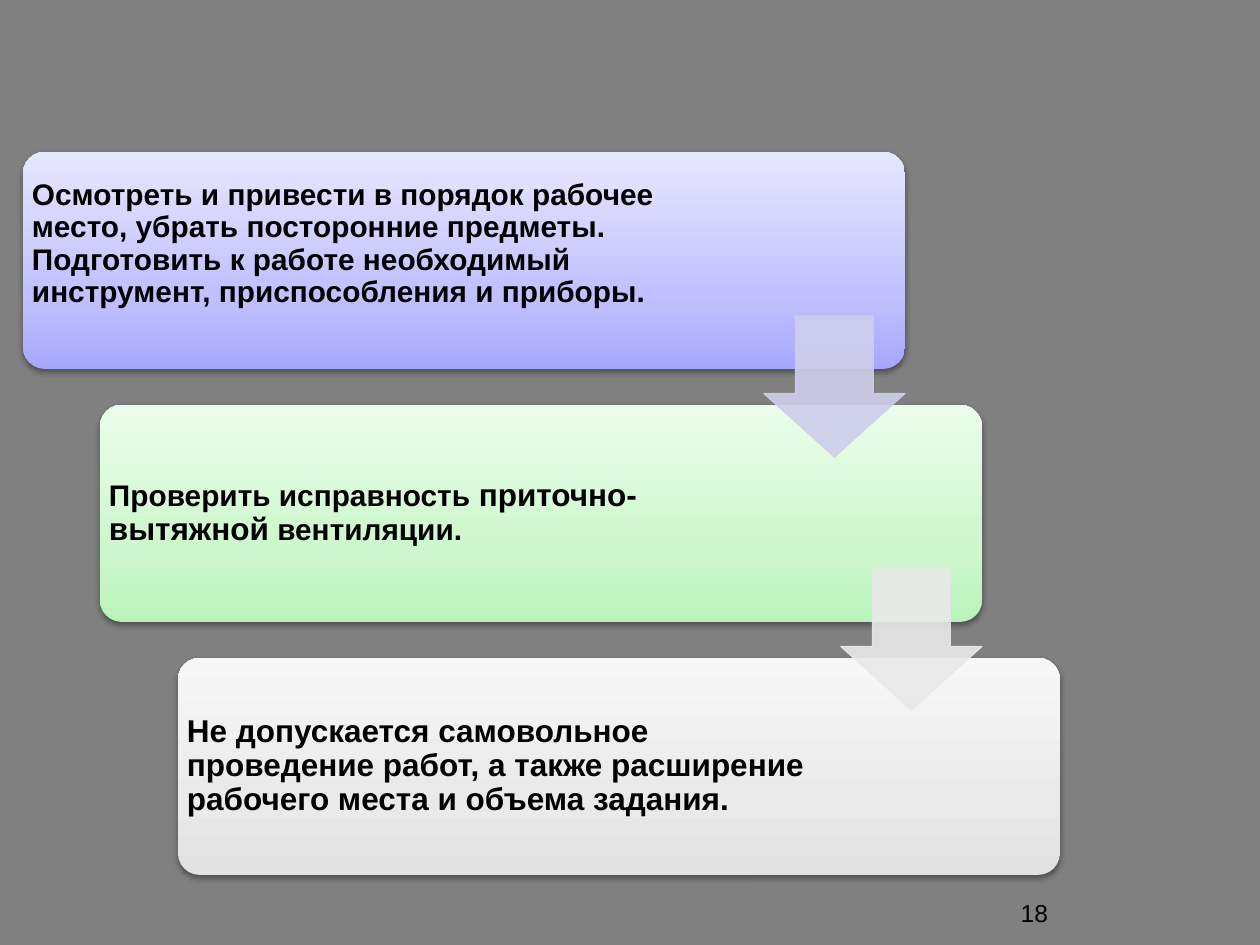
from copy import deepcopy
from dataclasses import dataclass

from pptx import Presentation
from pptx.dml.color import RGBColor
from pptx.enum.shapes import MSO_SHAPE
from pptx.enum.text import MSO_ANCHOR, PP_ALIGN
from pptx.oxml import parse_xml
from pptx.oxml.ns import nsdecls, qn
from pptx.util import Pt

EMU_PER_PX = 914400 / 126


@dataclass(frozen=True)
class Theme:
    font: str = "Arial"
    background: str = "808080"
    ink: str = "000000"
    small: int = 17
    large: int = 18
    number: int = 14
    cards: tuple = (
        ("A7A7FF", "C1C1FF", "E7E7FF"),
        ("BAF4BA", "CEF7CE", "EBFDEB"),
        ("E2E2E2", "EAEAEA", "F7F7F7"),
    )
    arrows: tuple = ("CECEEC", "E9E9E9")


@dataclass(frozen=True)
class Box:
    left: int
    top: int
    width: int
    height: int

    def emu(self):
        return [px(n) for n in (self.left, self.top, self.width, self.height)]


THEME = Theme()

STEPS = (
    (
        (
            ("Осмотреть и привести в порядок рабочее место, убрать посторонние предметы.", THEME.small),
            ("\n", THEME.small),
            ("Подготовить к работе необходимый инструмент, приспособления и приборы.", THEME.small),
        ),
        41,
    ),
    (
        (
            ("Проверить исправность ", THEME.small),
            ("приточно-вытяжной", THEME.large),
            (" вентиляции.", THEME.small),
        ),
        9,
    ),
    (
        (
            (
                "Не допускается самовольное проведение работ, а также расширение "
                "рабочего места и объема задания.",
                THEME.large,
            ),
        ),
        9,
    ),
)


def px(length):
    return round(length * EMU_PER_PX)


def color(value):
    return RGBColor.from_string(value)


def add_span(para, text, size, bold=False):
    if text == "\n":
        previous = para.runs[-1].font
        para.add_line_break()
        para._p[-1].append(deepcopy(para.runs[-1]._r.rPr))
        previous.size = Pt(size)
        return
    span = para.add_run()
    span.text = text
    span.font.name = THEME.font
    span.font.size = Pt(size)
    span.font.bold = bold
    span.font.color.rgb = color(THEME.ink)


def add_text_box(page, box, insets, anchor):
    frame = page.shapes.add_textbox(*box.emu()).text_frame
    frame.word_wrap = True
    frame.vertical_anchor = anchor
    frame.margin_left, frame.margin_top, frame.margin_right, frame.margin_bottom = map(px, insets)
    return frame.paragraphs[0]


def add_shadow(shape):
    shape._element.spPr.append(parse_xml(
        f'<a:effectLst {nsdecls("a")}>'
        f'<a:outerShdw blurRad="{Pt(3.1)}" dist="{Pt(1.6)}" dir="5400000" rotWithShape="0">'
        '<a:srgbClr val="000000"><a:alpha val="38000"/></a:srgbClr>'
        '</a:outerShdw></a:effectLst>'
    ))


def add_card(page, box, colors, spans, bottom_inset):
    card = page.shapes.add_shape(MSO_SHAPE.ROUNDED_RECTANGLE, *box.emu())
    card.adjustments[0] = 0.1
    card.line.fill.background()
    card.fill.gradient()
    card.fill.gradient_angle = 90
    stop_list = card._element.spPr.find(".//" + qn("a:gsLst"))
    stop_list.append(deepcopy(stop_list[-1]))
    for stop, value, position in zip(card.fill.gradient_stops, colors, (0, 0.35, 1)):
        stop.color.rgb = color(value)
        stop.position = position
    add_shadow(card)

    text_box = Box(box.left, box.top, 662, box.height)
    para = add_text_box(page, text_box, (9, 9, 9, bottom_inset), MSO_ANCHOR.MIDDLE)
    para.line_spacing = 0.9
    for text, size in spans:
        add_span(para, text, size, bold=True)


def add_arrow(page, box, value):
    arrow = page.shapes.add_shape(MSO_SHAPE.DOWN_ARROW, *box.emu())
    arrow.shadow.inherit = False
    arrow.adjustments[0] = 0.55
    arrow.adjustments[1] = 0.45
    arrow.fill.solid()
    arrow.fill.fore_color.rgb = color(value)
    arrow.line.color.rgb = color(value)
    arrow.line.width = Pt(0.75)
    for paint in arrow._element.spPr.iter(qn("a:srgbClr")):
        paint.append(parse_xml(f'<a:alpha {nsdecls("a")} val="90000"/>'))


def add_staircase(page, box):
    card_width, card_height = 882, 217
    gaps = len(STEPS) - 1
    cards = [
        Box(
            box.left + (box.width - card_width) * index // gaps,
            box.top + (box.height - card_height) * index // gaps,
            card_width,
            card_height,
        )
        for index in range(len(STEPS))
    ]
    for card, colors, (spans, bottom_inset) in zip(cards, THEME.cards, STEPS):
        add_card(page, card, colors, spans, bottom_inset)
    for card, value in zip(cards, THEME.arrows):
        add_arrow(page, Box(card.left + 741, card.top + 164, 141, 141), value)


def add_page_number(page, box, number):
    para = add_text_box(page, box, (13, 6, 13, 6), MSO_ANCHOR.TOP)
    para.alignment = PP_ALIGN.RIGHT
    add_span(para, number, THEME.number)


def main():
    deck = Presentation()
    deck.slide_width, deck.slide_height = px(1260), px(945)
    page = deck.slides.add_slide(deck.slide_layouts[6])
    page.background.fill.solid()
    page.background.fill.fore_color.rgb = color(THEME.background)
    add_staircase(page, Box(23, 152, 1037, 723))
    add_page_number(page, Box(799, 892, 262, 39), "18")
    deck.save("out.pptx")


if __name__ == "__main__":
    main()
